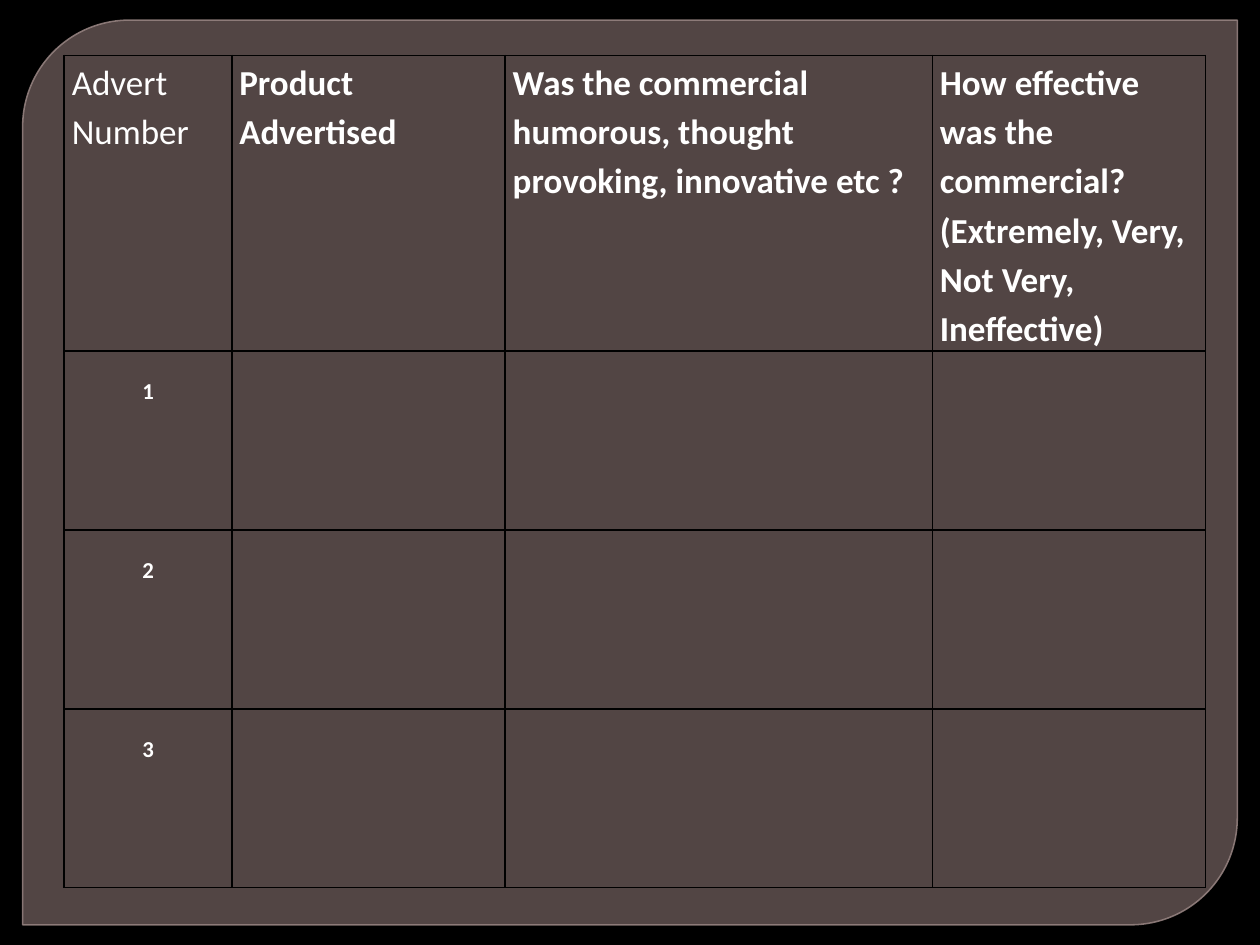
from lxml import etree
from pptx import Presentation
from pptx.dml.color import RGBColor
from pptx.enum.shapes import MSO_SHAPE
from pptx.enum.text import PP_ALIGN
from pptx.oxml.ns import qn
from pptx.util import Inches, Pt

PANEL = MSO_SHAPE.ROUND_2_DIAG_RECTANGLE
LEFT, MID = PP_ALIGN.LEFT, PP_ALIGN.CENTER
BLACK = RGBColor(0x00, 0x00, 0x00)
WHITE = RGBColor(0xFF, 0xFF, 0xFF)
BROWN = RGBColor(0x7F, 0x6B, 0x69)
EDGE = RGBColor(0x96, 0x83, 0x81)

WIDTHS = [1.33, 2.17, 3.39, 2.17]
HEIGHTS = [2.34] + [1.42] * 3
PAD = 0.06
DROP = 0.18
HEADS = [
    ["Advert Number"],
    ["Product Advertised"],
    ["Was the commercial",
     "humorous, thought provoking, innovative etc ?"],
    ["How effective was the commercial?",
     "(Extremely, Very, Not Very, Ineffective)"],
]
FONT = {"name": "Calibri", "bold": True}
HEAD = {**FONT, "size": Pt(20)}
PLAIN = {**HEAD, "bold": False}
COUNT = {**FONT, "size": Pt(13)}


def fade(fill, share):
    """Set the opacity, in percent, of a solid fill element."""
    tag = etree.SubElement(fill[0], qn("a:alpha"))
    tag.set("val", str(share * 1000))


def add_panel(slide, box):
    panel = slide.shapes.add_shape(PANEL, *map(Inches, box))
    panel.shadow.inherit = False
    panel.adjustments[0] = 0.118
    panel.adjustments[1] = 0
    panel.fill.solid()
    panel.fill.fore_color.rgb = BROWN
    panel.line.color.rgb = EDGE
    panel.line.width = Pt(0.87)
    props = panel.element.spPr
    fade(props.find(qn("a:solidFill")), 65)
    fade(props.find(qn("a:ln")).find(qn("a:solidFill")), 88)


def add_rules(cell):
    """Draw a thin black line on all four sides of a cell."""
    props = cell._tc.get_or_add_tcPr()
    for place, side in enumerate("LRTB"):
        line = etree.Element(qn(f"a:ln{side}"), w=str(Pt(1)))
        fill = etree.SubElement(line, qn("a:solidFill"))
        etree.SubElement(fill, qn("a:srgbClr"), val=str(BLACK))
        props.insert(place, line)


def write(cell, lines, style, align=LEFT):
    frame = cell.text_frame
    frame.text = "\n".join(lines)
    for para in frame.paragraphs:
        para.alignment = align
        para.line_spacing = 1.15
        for run in para.runs:
            for key, value in style.items():
                setattr(run.font, key, value)
            run.font.color.rgb = WHITE


def add_grid(slide, left, top):
    size = len(HEIGHTS), len(WIDTHS)
    box = left, top, sum(WIDTHS), sum(HEIGHTS)
    table = slide.shapes.add_table(*size, *map(Inches, box)).table
    table.first_row = table.horz_banding = False
    for col, width in zip(table.columns, WIDTHS):
        col.width = Inches(width)
    for row, height in zip(table.rows, HEIGHTS):
        row.height = Inches(height)
    for cell in table.iter_cells():
        cell.margin_left = cell.margin_right = Inches(PAD)
        cell.margin_top = cell.margin_bottom = 0
        cell.fill.background()
        add_rules(cell)
    for col, lines in enumerate(HEADS):
        write(table.cell(0, col), lines, HEAD if col else PLAIN)
    for row in range(1, len(HEIGHTS)):
        cell = table.cell(row, 0)
        cell.margin_top = Inches(DROP)
        write(cell, [str(row)], COUNT, MID)


def main():
    deck = Presentation()
    deck.slide_width, deck.slide_height = Inches(10), Inches(7.5)
    slide = deck.slides.add_slide(deck.slide_layouts[6])
    slide.background.fill.solid()
    slide.background.fill.fore_color.rgb = BLACK
    add_panel(slide, (0.18, 0.16, 9.64, 7.18))
    add_grid(slide, 0.51, 0.44)
    deck.save("out.pptx")


if __name__ == "__main__":
    main()
